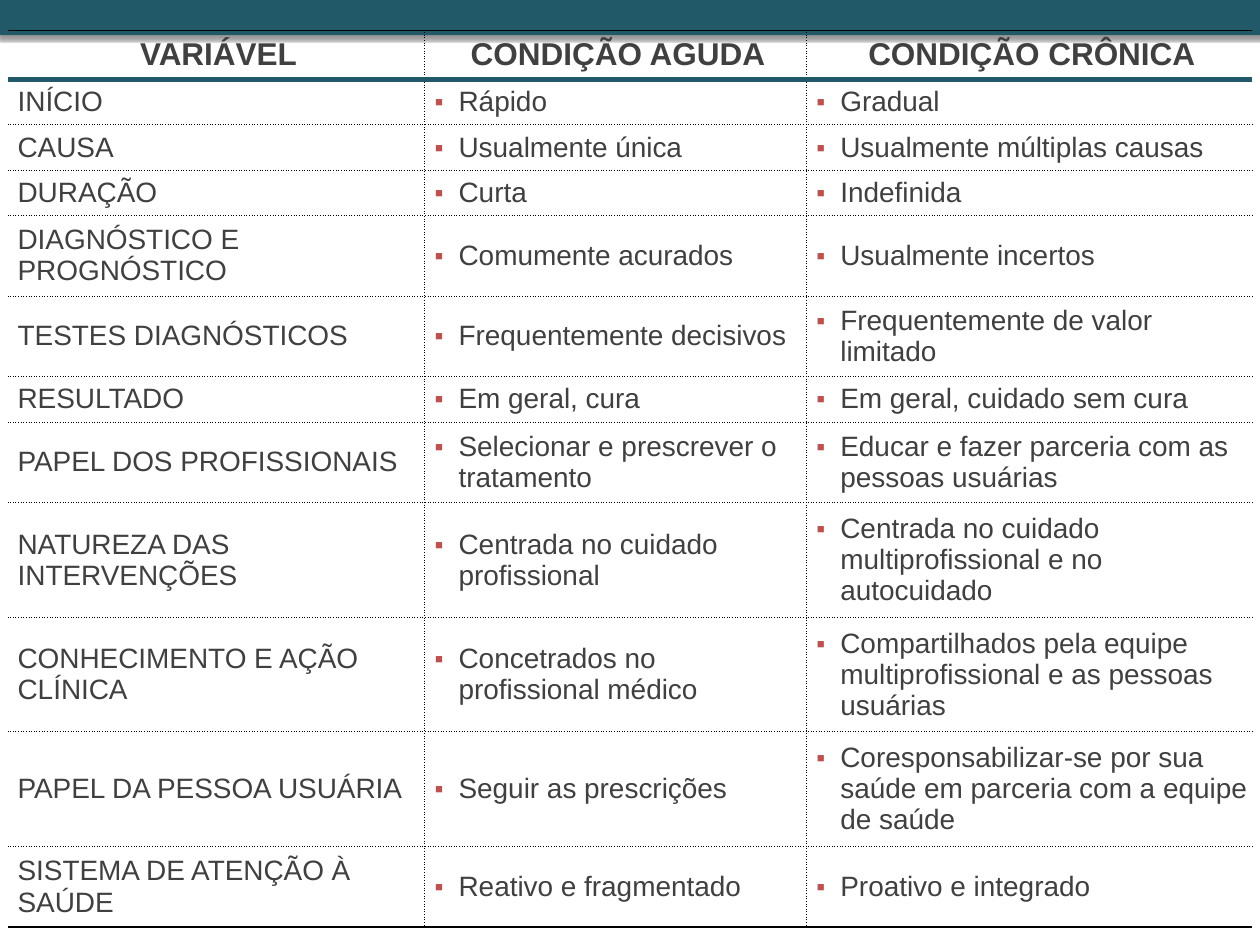
from lxml import etree
from pptx import Presentation
from pptx.dml.color import RGBColor
from pptx.enum.shapes import MSO_SHAPE
from pptx.enum.text import MSO_ANCHOR, PP_ALIGN
from pptx.oxml.ns import qn
from pptx.util import Inches, Pt

RECTANGLE = MSO_SHAPE.RECTANGLE
MIDDLE = MSO_ANCHOR.MIDDLE
CENTER, LEFT = PP_ALIGN.CENTER, PP_ALIGN.LEFT

HEADERS = ["VARIÁVEL", "CONDIÇÃO AGUDA", "CONDIÇÃO CRÔNICA"]
# Row height, variable, acute condition, chronic condition
ROWS = [
    (0.36, "INÍCIO", "Rápido", "Gradual"),
    (0.36, "CAUSA", "Usualmente única", "Usualmente múltiplas causas"),
    (0.36, "DURAÇÃO", "Curta", "Indefinida"),
    (0.64, "DIAGNÓSTICO E PROGNÓSTICO", "Comumente acurados", "Usualmente incertos"),
    (0.64, "TESTES DIAGNÓSTICOS", "Frequentemente decisivos",
     "Frequentemente de valor limitado"),
    (0.36, "RESULTADO", "Em geral, cura", "Em geral, cuidado sem cura"),
    (0.64, "PAPEL DOS PROFISSIONAIS", "Selecionar e prescrever o tratamento",
     "Educar e fazer parceria com as pessoas usuárias"),
    (0.91, "NATUREZA DAS INTERVENÇÕES", "Centrada no cuidado profissional",
     "Centrada no cuidado multiprofissional e no autocuidado"),
    (0.91, "CONHECIMENTO E AÇÃO CLÍNICA", "Concetrados no profissional médico",
     "Compartilhados pela equipe multiprofissional e as pessoas usuárias"),
    (0.91, "PAPEL DA PESSOA USUÁRIA", "Seguir as prescrições",
     "Coresponsabilizar-se por sua saúde em parceria com a equipe de saúde"),
    (0.64, "SISTEMA DE ATENÇÃO À SAÚDE", "Reativo e fragmentado",
     "Proativo e integrado"),
]
HEADER_HEIGHT = 0.39
COLUMN_WIDTHS = [3.31, 3.03, 3.54]
TABLE_LEFT, TABLE_TOP = 0.06, 0.24

THEME = {
    "font": "Arial", "header_size": 18, "body_size": 16,
    "text": "404040", "bar": "215968", "bullet": "C0504D", "line": "000000",
}
# Colour, width in points, dash
DOTTED = (THEME["line"], 0.5, "sysDot")
OUTER = (THEME["line"], 1, "solid")
HEADER_RULE = (THEME["bar"], 3, "solid")


def add_element(parent, tag, **attributes):
    element = etree.SubElement(parent, qn(tag))
    for name, value in attributes.items():
        element.set(name, str(value))
    return element


def add_bar(slide, left, top, width, height):
    bar = slide.shapes.add_shape(
        RECTANGLE, Inches(left), Inches(top), Inches(width), Inches(height))
    bar.shadow.inherit = False
    bar.fill.solid()
    bar.fill.fore_color.rgb = RGBColor.from_string(THEME["bar"])
    bar.line.fill.background()
    return bar


def add_top_bars(slide):
    shadowed = add_bar(slide, -0.02, 0, 10.04, 0.28)
    effects = shadowed._element.spPr.find(qn("a:effectLst"))
    shadow = add_element(effects, "a:outerShdw", blurRad=Pt(2), dist=Pt(2),
                         dir=90 * 60000, algn="t", rotWithShape=0)
    color = add_element(shadow, "a:srgbClr", val=THEME["line"])
    add_element(color, "a:alpha", val=40000)

    translucent = add_bar(slide, 0, 0, 10, 0.2)
    color = translucent._element.spPr.find(qn("a:solidFill")).find(qn("a:srgbClr"))
    add_element(color, "a:alpha", val=90000)


def write_text(cell, text, size, bold=False, align=LEFT, indent=0, bullet=None):
    """Write one paragraph; indent is a hanging indent in inches."""
    cell.vertical_anchor = MIDDLE
    cell.margin_left = Inches(0.08)
    cell.margin_right = cell.margin_top = cell.margin_bottom = Inches(0.04)
    paragraph = cell.text_frame.paragraphs[0]
    paragraph.alignment = align
    run = paragraph.add_run()
    run.text = text
    run.font.name = THEME["font"]
    run.font.size = Pt(size)
    run.font.bold = bold
    run.font.color.rgb = RGBColor.from_string(THEME["text"])

    properties = paragraph._p.get_or_add_pPr()
    properties.set("marL", str(Inches(indent)))
    properties.set("indent", str(-Inches(indent)))
    if bullet:
        color = add_element(properties, "a:buClr")
        add_element(color, "a:srgbClr", val=THEME["bullet"])
        add_element(properties, "a:buSzPct", val=90000)
        add_element(properties, "a:buFont", typeface=THEME["font"])
        add_element(properties, "a:buChar", char=bullet)
    else:
        add_element(properties, "a:buNone")


def set_borders(cell, left, right, top, bottom):
    """Draw the four sides; a side given as None has no line."""
    properties = cell._tc.get_or_add_tcPr()
    sides = {"a:lnL": left, "a:lnR": right, "a:lnT": top, "a:lnB": bottom}
    for tag, border in sides.items():
        line = add_element(properties, tag)
        if border is None:
            add_element(line, "a:noFill")
            continue
        color, width, dash = border
        line.set("w", str(Pt(width)))
        fill = add_element(line, "a:solidFill")
        add_element(fill, "a:srgbClr", val=color)
        add_element(line, "a:prstDash", val=dash)


def add_comparison_table(slide):
    contents = [HEADERS] + [row[1:] for row in ROWS]
    heights = [HEADER_HEIGHT] + [row[0] for row in ROWS]
    row_count, column_count = len(contents), len(HEADERS)
    table = slide.shapes.add_table(
        row_count, column_count, Inches(TABLE_LEFT), Inches(TABLE_TOP),
        Inches(sum(COLUMN_WIDTHS)), Inches(sum(heights))).table
    table.first_row = table.horz_banding = False
    for column, width in zip(table.columns, COLUMN_WIDTHS):
        column.width = Inches(width)
    for row, height in zip(table.rows, heights):
        row.height = Inches(height)

    verticals = [None] + [DOTTED] * (column_count - 1) + [None]
    horizontals = [OUTER, HEADER_RULE] + [DOTTED] * (row_count - 2) + [OUTER]
    for r, texts in enumerate(contents):
        for c, text in enumerate(texts):
            cell = table.cell(r, c)
            if r == 0:
                write_text(cell, text, THEME["header_size"], bold=True,
                           align=CENTER, indent=0.38)
            elif c == 0:
                write_text(cell, text, THEME["body_size"])
            else:
                write_text(cell, text, THEME["body_size"], indent=0.19, bullet="▪")
            set_borders(cell, verticals[c], verticals[c + 1],
                        horizontals[r], horizontals[r + 1])
            cell.fill.background()


def main():
    presentation = Presentation()
    presentation.slide_width = Inches(10)
    presentation.slide_height = Inches(7.5)
    slide = presentation.slides.add_slide(presentation.slide_layouts[6])
    add_top_bars(slide)
    add_comparison_table(slide)
    presentation.save("out.pptx")


if __name__ == "__main__":
    main()
